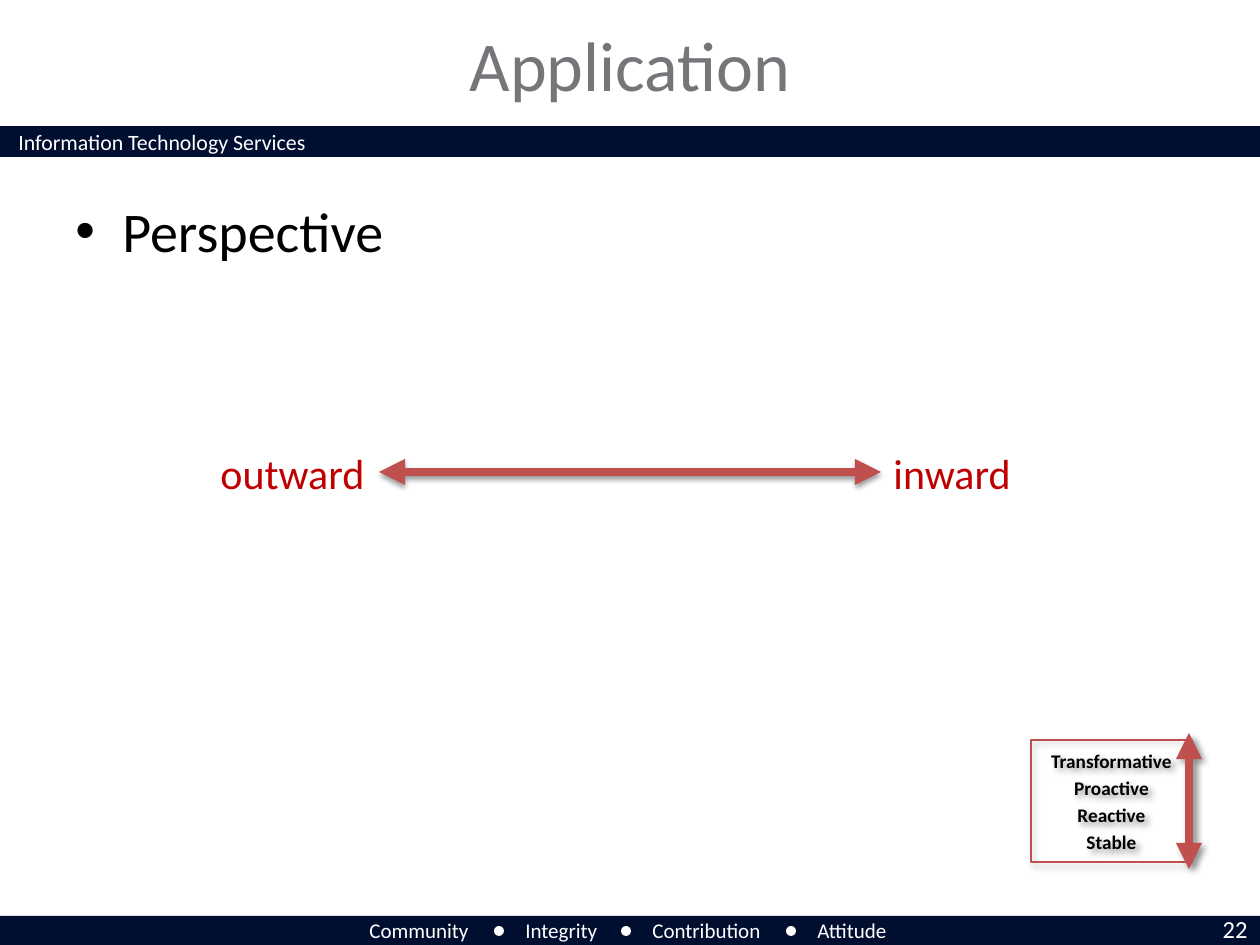
from lxml import etree
from pptx import Presentation
from pptx.dml.color import RGBColor
from pptx.enum.shapes import MSO_CONNECTOR, MSO_SHAPE
from pptx.enum.text import MSO_ANCHOR, PP_ALIGN
from pptx.oxml.ns import qn
from pptx.util import Pt

LEFT, CENTER, RIGHT = PP_ALIGN.LEFT, PP_ALIGN.CENTER, PP_ALIGN.RIGHT
TOP, MIDDLE = MSO_ANCHOR.TOP, MSO_ANCHOR.MIDDLE
RECTANGLE, OVAL = MSO_SHAPE.RECTANGLE, MSO_SHAPE.OVAL
STRAIGHT = MSO_CONNECTOR.STRAIGHT

THEME = {
    "font": "Calibri",
    "navy": "000E2F", "white": "FFFFFF", "gray": "747679", "black": "000000",
    "red": "C00000", "brick": "C0504D",
    "title": 40, "body": 32, "pole": 24, "page": 14, "header": 12.5,
    "footer": 12, "level": 11, "arrow": 5, "outline": 0.75,
}

BANDS = [126, 916]
FOOTER_WORDS = [("Community", 357, 126), ("Integrity", 513, 101),
                ("Contribution", 640, 139), ("Attitude", 805, 98)]
DOT_SIZE, DOT_GAP = 10, 19
POLES = [("outward", 208, 171), ("inward", 881, 144)]
LEVELS = ["Transformative", "Proactive", "Reactive", "Stable"]
SOFT_SHADOW = {"alpha": 38, "blur": 3.1, "distance": 1.6, "angle": 90}
DEEP_SHADOW = {"alpha": 40, "blur": 4, "distance": 3, "angle": 45}
ARROWS = [(379, 472, 881, 472, SOFT_SHADOW), (1189, 733, 1189, 869, DEEP_SHADOW)]


def px(length):
    return round(length * 914400 / 126)


def color(name):
    return RGBColor.from_string(THEME[name])


def add_shadow(shape, alpha, blur, distance, angle):
    effects = etree.SubElement(shape._element.spPr, qn("a:effectLst"))
    shadow = etree.SubElement(
        effects, qn("a:outerShdw"), blurRad=str(Pt(blur)), dist=str(Pt(distance)),
        dir=str(angle * 60000), rotWithShape="0")
    tint = etree.SubElement(shadow, qn("a:srgbClr"), val=THEME["black"])
    etree.SubElement(tint, qn("a:alpha"), val=str(alpha * 1000))


def add_solid(page, kind, left, top, width, height, fill):
    shape = page.shapes.add_shape(kind, px(left), px(top), px(width), px(height))
    shape.shadow.inherit = False
    shape.fill.solid()
    shape.fill.fore_color.rgb = color(fill)
    shape.line.fill.background()


def write(shape, lines, size, ink, align=LEFT, anchor=TOP, wrap=True, bold=False):
    frame = shape.text_frame
    frame.text = "\n".join(lines)
    frame.word_wrap = wrap
    frame.vertical_anchor = anchor
    for index, para in enumerate(frame.paragraphs):
        para.alignment = align
        if index:
            para.space_before = Pt(THEME[size] * 0.2)
        for span in para.runs:
            span.font.name = THEME["font"]
            span.font.size = Pt(THEME[size])
            span.font.bold = bold
            span.font.color.rgb = color(ink)


def add_text(page, text, left, top, width, height, size, ink, **style):
    box = page.shapes.add_textbox(px(left), px(top), px(width), px(height))
    write(box, [text], size, ink, **style)
    return box


def add_bullet(para, indent):
    properties = para._p.get_or_add_pPr()
    properties.set("marL", str(px(indent)))
    properties.set("indent", str(-px(indent)))
    etree.SubElement(properties, qn("a:buFont"), typeface="Arial")
    etree.SubElement(properties, qn("a:buChar"), char="•")


def add_arrow(page, x1, y1, x2, y2, shadow):
    arrow = page.shapes.add_connector(STRAIGHT, px(x1), px(y1), px(x2), px(y2))
    arrow.line.color.rgb = color("brick")
    arrow.line.width = Pt(THEME["arrow"])
    for end in ("a:headEnd", "a:tailEnd"):
        etree.SubElement(arrow.line._get_or_add_ln(), qn(end), type="triangle")
    add_shadow(arrow, **shadow)


def add_levels(page):
    panel = page.shapes.add_shape(RECTANGLE, px(1031), px(740), px(161), px(122))
    panel.fill.background()
    panel.line.color.rgb = color("brick")
    panel.line.width = Pt(THEME["outline"])
    add_shadow(panel, **DEEP_SHADOW)
    write(panel, LEVELS, "level", "black", align=CENTER, anchor=MIDDLE, bold=True)


def main():
    deck = Presentation()
    deck.slide_width, deck.slide_height = px(1260), px(945)
    page = deck.slides.add_slide(deck.slide_layouts[6])

    for top in BANDS:
        add_solid(page, RECTANGLE, 0, top, 1260, 31, "navy")
    add_text(page, "Information Technology Services", 6, 122, 428, 40, "header", "white")
    for index, (word, left, width) in enumerate(FOOTER_WORDS):
        add_text(page, word, left, 911, width, 38, "footer", "white", wrap=False)
        if index:
            add_solid(page, OVAL, left - DOT_GAP, 926, DOT_SIZE, DOT_SIZE, "white")
    add_text(page, "22", 1164, 908, 96, 43, "page", "white", align=RIGHT)

    add_text(page, "Application", 126, 13, 1008, 101, "title", "gray",
             align=CENTER, anchor=MIDDLE)
    body = add_text(page, "Perspective", 63, 190, 1134, 102, "body", "black")
    add_bullet(body.text_frame.paragraphs[0], 47)

    for word, left, width in POLES:
        add_text(page, word, left, 441, width, 63, "pole", "red", wrap=False)
    add_levels(page)
    for arrow in ARROWS:
        add_arrow(page, *arrow)

    deck.save("out.pptx")


if __name__ == "__main__":
    main()
